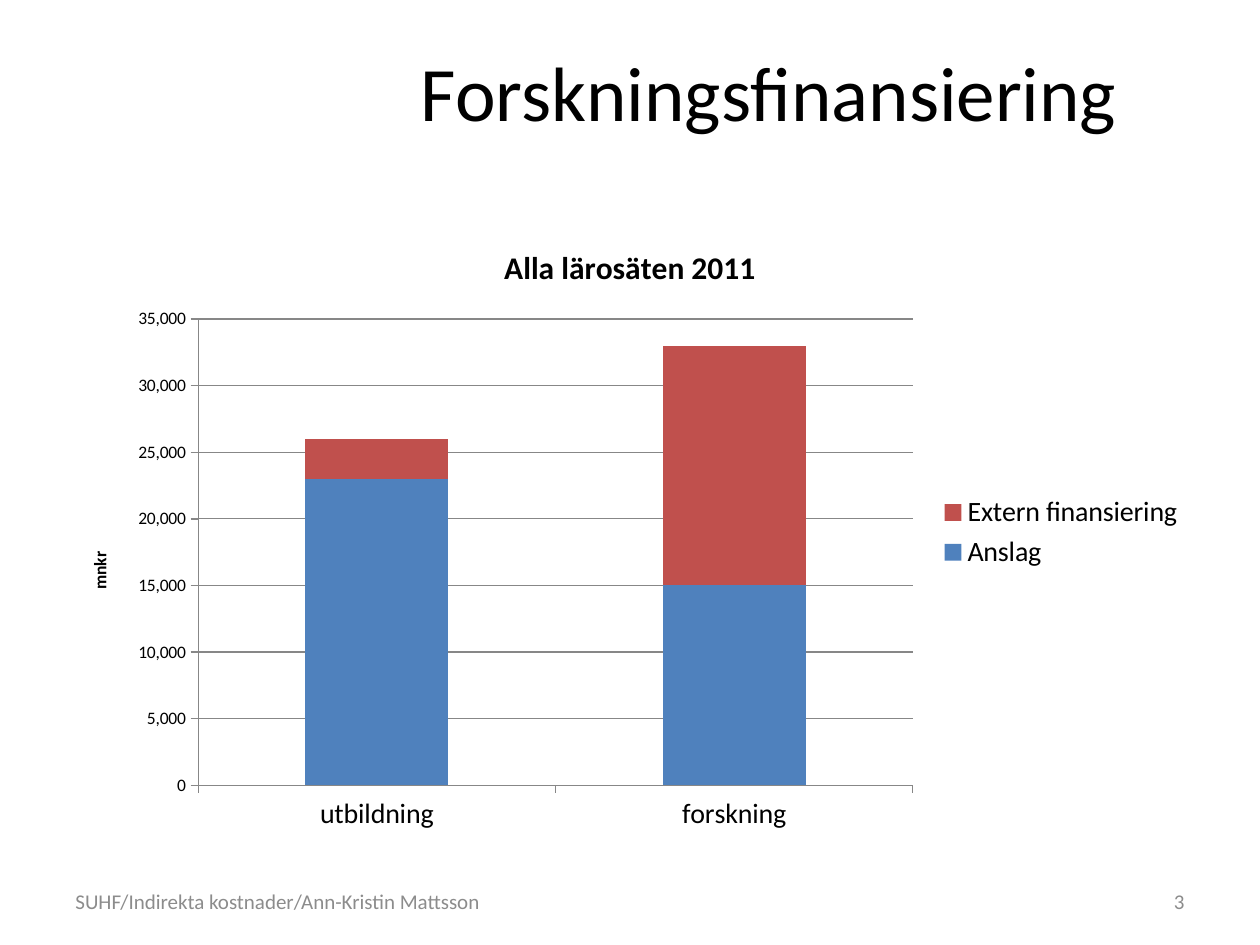
from dataclasses import dataclass

import pptx
import pptx.chart.data
import pptx.dml.color
import pptx.enum.chart
import pptx.enum.text
import pptx.util

Pt = pptx.util.Pt
Align = pptx.enum.text.PP_ALIGN
FONT = "Calibri"
COLORS = {
    "text": "000000",
    "muted": "8C8C8C",
    "grant": "4F81BD",
    "extern": "C0504D",
    "line": "878787",
}


@dataclass
class Label:
    text: str
    left: float
    top: float
    width: float
    height: float
    size: float
    color: str
    align: Align


@dataclass
class Series:
    name: str
    values: tuple[int, ...]
    color: str


LABELS = [
    Label("Forskningsfinansiering", 196, 20.5, 487, 62.6, 44, "text", Align.CENTER),
    Label("SUHF/Indirekta kostnader/Ann-Kristin Mattsson",
          36, 500.5, 381, 28.5, 12, "muted", Align.LEFT),
    Label("3", 581, 500.5, 103, 28.5, 12, "muted", Align.RIGHT),
]
GROUPS = ("utbildning", "forskning")
SERIES = [
    Series("Anslag", (23000000, 15000000), "grant"),
    Series("Extern finansiering", (3000000, 18000000), "extern"),
]


def shade(key: str) -> pptx.dml.color.RGBColor:
    return pptx.dml.color.RGBColor.from_string(COLORS[key])


def style(font, size: float, color: str = "text", bold: bool = False) -> None:
    font.name = FONT
    font.size = Pt(size)
    font.bold = bold
    font.color.rgb = shade(color)


def add_label(slide, label: Label) -> None:
    box = slide.shapes.add_textbox(
        Pt(label.left), Pt(label.top), Pt(label.width), Pt(label.height))
    frame = box.text_frame
    frame.word_wrap = True
    frame.vertical_anchor = pptx.enum.text.MSO_ANCHOR.MIDDLE
    para = frame.paragraphs[0]
    para.text = label.text
    para.alignment = label.align
    style(para.font, label.size, label.color)


def set_title(owner, text: str, size: float) -> None:
    frame = owner.text_frame
    frame.text = text
    style(frame.paragraphs[0].font, size, bold=True)


def draw_line(line) -> None:
    line.color.rgb = shade("line")
    line.width = Pt(0.75)


def add_chart(slide) -> None:
    enum = pptx.enum.chart
    data = pptx.chart.data.CategoryChartData(number_format="#,##0")
    data.categories = GROUPS
    for item in SERIES:
        data.add_series(item.name, item.values)
    chart = slide.shapes.add_chart(
        enum.XL_CHART_TYPE.COLUMN_STACKED,
        Pt(36), Pt(126), Pt(648), Pt(356.5), data).chart
    style(chart.font, 10)
    chart.has_title = True
    set_title(chart.chart_title, "Alla lärosäten 2011", 18)
    chart.chart_title.include_in_layout = False

    plot = chart.plots[0]
    plot.gap_width = 150
    plot.overlap = 100
    plot.vary_by_categories = False
    for series, item in zip(plot.series, SERIES):
        series.format.fill.solid()
        series.format.fill.fore_color.rgb = shade(item.color)

    axis = chart.value_axis
    axis.minimum_scale = 0
    axis.maximum_scale = 35000000
    axis.major_unit = 5000000
    axis.has_major_gridlines = True
    draw_line(axis.major_gridlines.format.line)
    axis.tick_labels.number_format = "#,##0,"
    axis.tick_labels.number_format_is_linked = False
    set_title(axis.axis_title, "mnkr", 10)
    for side, size in ((axis, 10), (chart.category_axis, 16)):
        side.major_tick_mark = enum.XL_TICK_MARK.OUTSIDE
        style(side.tick_labels.font, size)
        draw_line(side.format.line)

    chart.has_legend = True
    chart.legend.position = enum.XL_LEGEND_POSITION.RIGHT
    chart.legend.include_in_layout = False
    style(chart.legend.font, 16)


def main() -> None:
    deck = pptx.Presentation()
    deck.slide_width = Pt(720)
    deck.slide_height = Pt(540)
    slide = deck.slides.add_slide(deck.slide_layouts[6])
    for label in LABELS:
        add_label(slide, label)
    add_chart(slide)
    deck.save("out.pptx")


if __name__ == "__main__":
    main()
